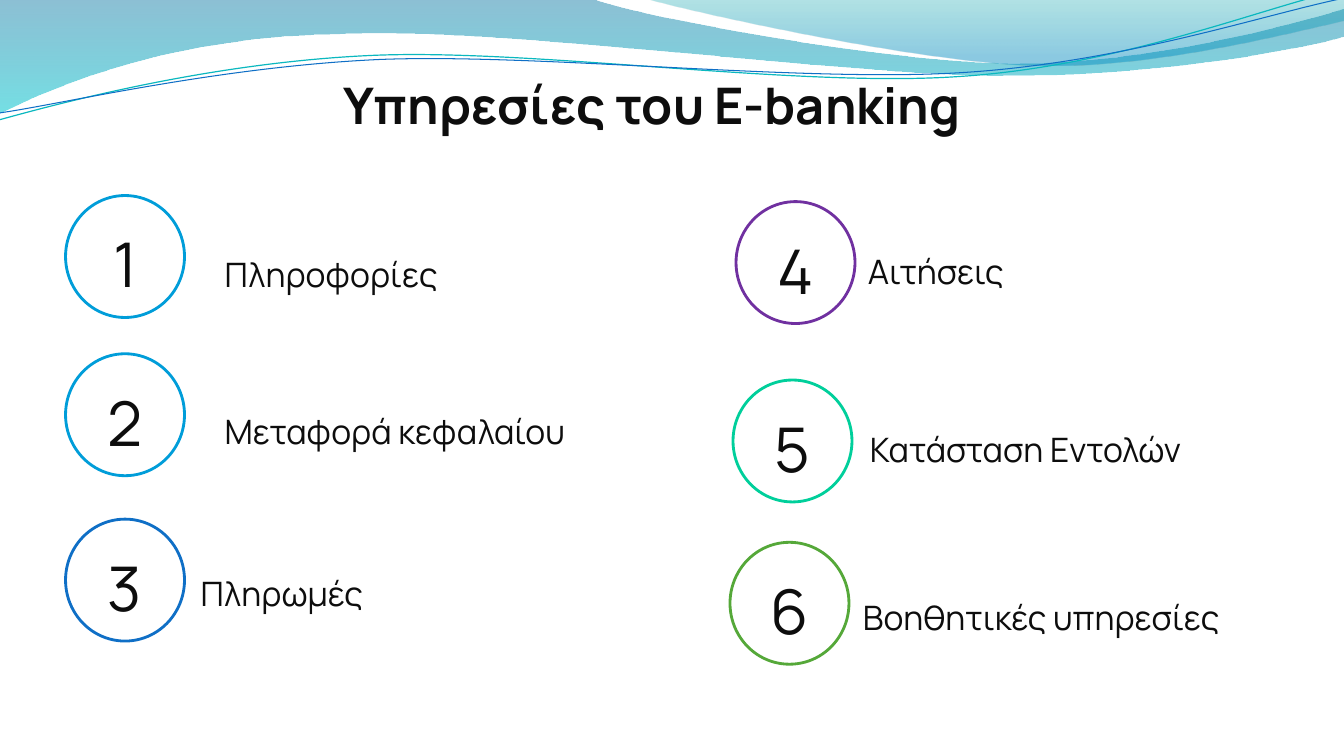
from math import cos, radians, sin
from lxml.etree import SubElement
from pptx import Presentation
from pptx.dml.color import RGBColor as Rgb
from pptx.enum.shapes import MSO_SHAPE as Shape
from pptx.enum.text import MSO_AUTO_SIZE as Fit, PP_ALIGN as Align
from pptx.oxml.ns import qn
from pptx.util import Inches, Pt

HUES = {
    "ink": "0D0D0D", "sky": "009DD9", "blue": "0F6FC6", "plum": "7030A0",
    "mint": "00CF9B", "leaf": "55A839", "aqua": "0AB8BF",
    "deep": "0074A1", "cyan": "00C6CF", "teal": "00A1A9", "lake": "008BBF",
}
FONT = "Manrope"
DISC = (1.18, 1.21)
LIFT = 0.11
TILT = 2.7

BAND = [(0, 0), (5.87, -0.01),
        (6.34, 0.17, 8.85, 0.63, 10.11, 0.63),
        (11.37, 0.63, 12.78, 0.26, 13.33, 0.09), (13.35, 0.36),
        (13.11, 0.44, 11.6, 0.76, 9.94, 0.75),
        (8.29, 0.75, 5.09, 0.28, 3.43, 0.34),
        (1.72, 0.36, 0.61, 0.83, -0.01, 1.13)]
CREST = [(6.39, -0.01),
         (6.79, 0.11, 9.09, 0.62, 10.25, 0.65),
         (11.41, 0.69, 12.82, 0.32, 13.33, 0.21), (13.33, 0)]
THREADS = [
    ("aqua", 0.85, (6.65, 0.57), [(-0.01, 1.19),
                                  (0.64, 1.01, 2.11, 0.62, 3.69, 0.55),
                                  (5.27, 0.48, 7.89, 0.87, 9.5, 0.76),
                                  (11.1, 0.66, 12.51, 0.08, 13.31, -0.1)]),
    ("blue", 0.75, (6.67, 0.59), [(0, 1.12),
                                  (0.63, 1.03, 2.18, 0.66, 3.78, 0.59),
                                  (5.37, 0.53, 7.96, 0.82, 9.55, 0.72),
                                  (11.15, 0.62, 12.55, 0.14, 13.34, -0.02)]),
]
ITEMS = [
    ("Πληροφορίες", "sky", (0.65, 1.94), (2.13, 2.27), 3.7, Align.JUSTIFY),
    ("Μεταφορά κεφαλαίου", "sky", (0.65, 3.51), (2.13, 3.83), 4.71, Align.JUSTIFY),
    ("Πληρωμές", "blue", (0.65, 5.15), (1.89, 5.43), 4.71, Align.JUSTIFY),
    ("Αιτήσεις", "plum", (7.3, 2), (8.51, 2.24), 4.22, Align.LEFT),
    ("Κατάσταση Εντολών", "mint", (7.27, 3.77), (8.53, 4.01), 4.22, Align.LEFT),
    ("Βοηθητικές υπηρεσίες", "leaf", (7.24, 5.38), (8.46, 5.67), 4.22, Align.LEFT),
]


def tint(name):
    """Return the named colour."""
    return Rgb.from_string(HUES[name])


def pairs(leg):
    """Split a flat leg into points."""
    return list(zip(leg[::2], leg[1::2]))


def turn(leg, mid):
    """Turn the points of a leg clockwise by the tilt about a centre."""
    c, s = cos(radians(TILT)), sin(radians(TILT))
    flat = []
    for x, y in pairs(leg):
        dx, dy = x - mid[0], y - mid[1]
        flat += [mid[0] + dx * c - dy * s, mid[1] + dx * s + dy * c]
    return tuple(flat)


def add_path(shapes, route, close):
    """Draw a route of lines and cubic curves as a freeform."""
    dots = [(Inches(x), Inches(y)) for leg in route for x, y in pairs(leg)]
    pen = shapes.build_freeform(*dots[0], scale=1.0)
    pen.add_line_segments(dots[1:], close=close)
    form = pen.convert_to_shape()
    form.shadow.inherit = False
    lines = form.element.spPr.iter(qn("a:lnTo"))
    lines = iter(list(lines))
    for leg in route[1:]:
        first, *rest = [next(lines) for _ in pairs(leg)]
        if rest:
            first.tag = qn("a:cubicBezTo")
        for line in rest:
            first.append(line[0])
            line.getparent().remove(line)
    return form


def add_wave(shapes, route, stops):
    """Fill a closed route with a downward, see-through gradient."""
    wave = add_path(shapes, route, True)
    wave.line.fill.background()
    wave.fill.gradient()
    wave.fill.gradient_angle = 270
    for stop, (place, name, _) in zip(wave.fill.gradient_stops, stops):
        stop.position = place
        stop.color.rgb = tint(name)
    marks = wave.element.spPr.iter(qn("a:srgbClr"))
    for mark, (_, _, alpha) in zip(list(marks), stops):
        SubElement(mark, qn("a:alpha")).set("val", str(alpha * 1000))


def set_line(shape, name, width):
    """Leave a shape hollow with a coloured outline."""
    shape.fill.background()
    shape.line.color.rgb = tint(name)
    shape.line.width = Pt(width)


def add_threads(shapes):
    """Draw the tilted thin curves as one group."""
    group = shapes.add_group_shape().shapes
    for name, width, mid, route in THREADS:
        thread = add_path(group, [turn(leg, mid) for leg in route], False)
        thread.rotation = 360 - TILT
        set_line(thread, name, width)


def add_text(shapes, text, spot, size, *, points=24, bold=False, align=Align.LEFT):
    """Place one line of text."""
    box = shapes.add_textbox(*map(Inches, spot + size))
    frame = box.text_frame
    frame.word_wrap = True
    frame.auto_size = Fit.SHAPE_TO_FIT_TEXT
    para = frame.paragraphs[0]
    para.alignment = align
    para.line_spacing = 1.5
    run = para.add_run()
    run.text = text
    run.font.name = FONT
    run.font.size = Pt(points)
    run.font.bold = bold
    run.font.color.rgb = tint("ink")


def add_badge(shapes, label, name, spot):
    """Draw a ring grouped with its number."""
    group = shapes.add_group_shape().shapes
    ring = group.add_shape(Shape.OVAL, *map(Inches, spot + DISC))
    ring.shadow.inherit = False
    set_line(ring, name, 2)
    left, top = spot
    add_text(group, label, (left, top - LIFT), DISC, points=44, align=Align.CENTER)


def main():
    """Build and save the slide."""
    deck = Presentation()
    deck.slide_width, deck.slide_height = Inches(13.33), Inches(7.5)
    shapes = deck.slides.add_slide(deck.slide_layouts[6]).shapes
    add_wave(shapes, BAND, [(0, "deep", 45), (1, "cyan", 55)])
    add_wave(shapes, CREST, [(0, "teal", 30), (0.8, "lake", 45)])
    add_threads(shapes)
    for rank, (text, name, spot, place, width, align) in enumerate(ITEMS, 1):
        add_badge(shapes, str(rank), name, spot)
        add_text(shapes, text, place, (width, 0.71), align=align)
    add_text(shapes, "Υπηρεσίες του E-banking", (0.42, 0.39), (12.09, 1.01),
             points=36, bold=True, align=Align.CENTER)
    deck.save("out.pptx")


if __name__ == "__main__":
    main()
